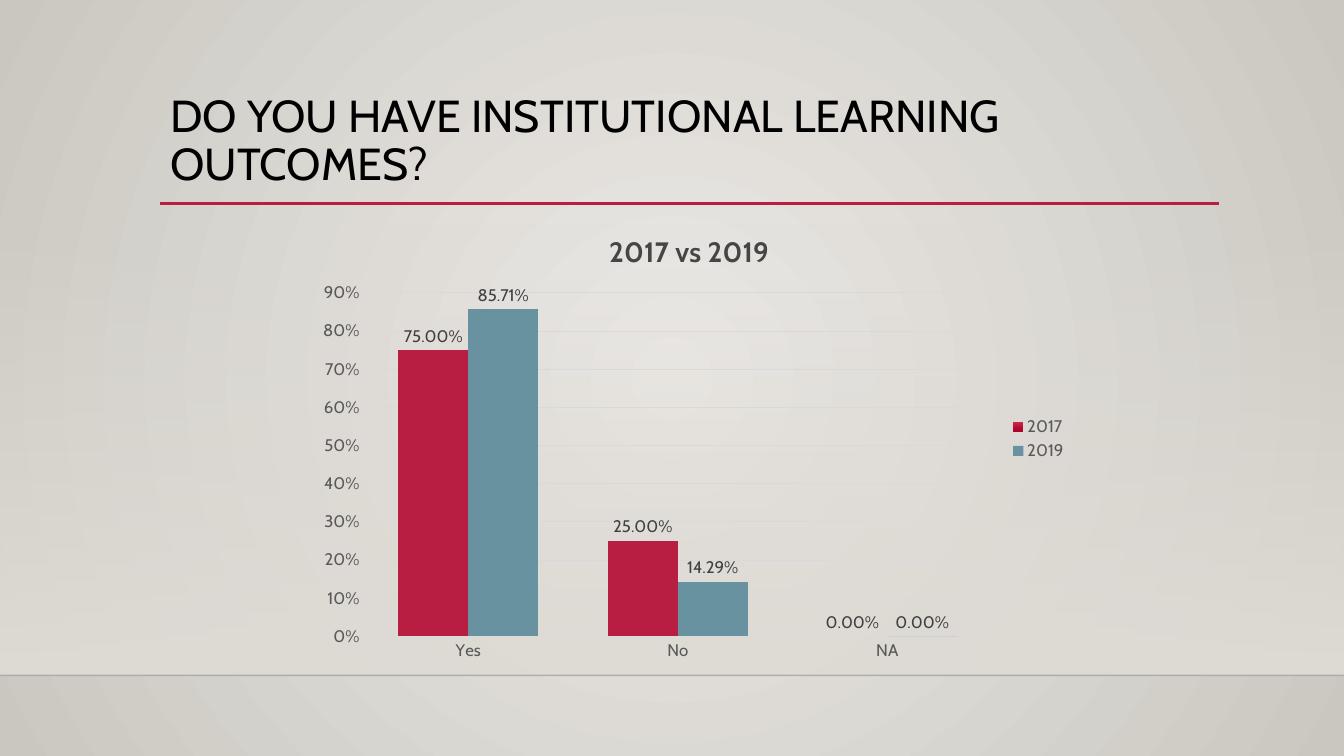
"""Build a slide that compares survey answers on learning outcomes in 2017 and 2019."""
from dataclasses import dataclass
from typing import Any, Optional

from lxml import etree
from pptx import Presentation
from pptx.chart.data import CategoryChartData
from pptx.dml.color import RGBColor
from pptx.enum.chart import XL_CHART_TYPE, XL_LABEL_POSITION, XL_LEGEND_POSITION, XL_TICK_MARK
from pptx.enum.shapes import MSO_CONNECTOR, MSO_SHAPE
from pptx.enum.text import MSO_ANCHOR, PP_ALIGN
from pptx.oxml.ns import qn
from pptx.util import Pt

COLUMN = XL_CHART_TYPE.COLUMN_CLUSTERED
OUTER = XL_LABEL_POSITION.OUTSIDE_END
RIGHT = XL_LEGEND_POSITION.RIGHT
NO_TICK = XL_TICK_MARK.NONE
STRAIGHT = MSO_CONNECTOR.STRAIGHT
RECT = MSO_SHAPE.RECTANGLE
TOP = MSO_ANCHOR.TOP
LEFT, CENTER = PP_ALIGN.LEFT, PP_ALIGN.CENTER

FONT = "Cabin"
WIDTH, HEIGHT = 960, 540
INK = {
    "black": "000000", "edge": "000001", "red": "B71E42", "blue": "6892A0",
    "title": "454545", "label": "404040", "axis": "595959", "grid": "D9D9D9",
    "wall": "DFDBD5", "light": "ECEAE7", "dark": "CAC7C1",
    "rose": "C7304C", "wine": "B3062F", "deep": "AA062C",
}


@dataclass
class Stop:
    place: int
    ink: str
    alpha: int = 100


@dataclass
class Rule:
    left: float
    right: float
    y: float
    ink: str
    width: float
    alpha: int = 100


@dataclass
class Survey:
    year: str
    shares: tuple[float, ...]
    ink: str
    stops: Optional[list[Stop]] = None


RULES = [
    Rule(0, WIDTH, 482.4, "edge", 1, 20),
    Rule(114.5, 871, 145.5, "red", 2.5),
]
ANSWERS = ["Yes", "No", "NA"]
SURVEYS = [
    Survey("2017", (0.75, 0.25, 0), "red",
           [Stop(0, "rose"), Stop(69, "wine"), Stop(100, "deep")]),
    Survey("2019", (0.8571, 0.1429, 0), "blue"),
]


def color(ink: str) -> RGBColor:
    return RGBColor.from_string(INK[ink])


def fade(node: Any, alpha: int) -> None:
    if alpha < 100:
        etree.SubElement(node, qn("a:alpha"), val=str(alpha * 1000))


def blend(owner: Any, fill: Any, stops: list[Stop], round_: bool = False) -> None:
    fill.gradient()
    grad = owner.find(".//" + qn("a:gradFill"))
    for child in list(grad):
        grad.remove(child)
    group = etree.SubElement(grad, qn("a:gsLst"))
    for stop in stops:
        mark = etree.SubElement(group, qn("a:gs"), pos=str(stop.place * 1000))
        fade(etree.SubElement(mark, qn("a:srgbClr"), val=INK[stop.ink]), stop.alpha)
    if round_:
        ring = etree.SubElement(grad, qn("a:path"), path="circle")
        etree.SubElement(ring, qn("a:fillToRect"), l="50000", t="50000", r="50000", b="50000")
    else:
        etree.SubElement(grad, qn("a:lin"), ang="5400000", scaled="0")


def style(font: Any, size: float, ink: str, bold: bool = False) -> None:
    font.name, font.size, font.bold = FONT, Pt(size), bold
    font.color.rgb = color(ink)


def write(frame: Any, text: str, *, size: float, ink: str, bold: bool = False,
          align: Any = LEFT, pitch: float = 1) -> None:
    para = frame.paragraphs[0]
    para.alignment, para.line_spacing = align, pitch
    run = para.add_run()
    run.text = text
    style(run.font, size, ink, bold)


def draw_rule(slide: Any, rule: Rule) -> None:
    line = slide.shapes.add_connector(STRAIGHT, Pt(rule.left), Pt(rule.y), Pt(rule.right), Pt(rule.y))
    line.line.width = Pt(rule.width)
    line.line.color.rgb = color(rule.ink)
    fade(line.element.find(".//" + qn("a:srgbClr")), rule.alpha)
    etree.SubElement(line.element.spPr, qn("a:effectLst"))


def place(node: Any, index: int, inner: bool = False, **spots: float) -> None:
    old = node.find(qn("c:layout"))
    if old is not None:
        node.remove(old)
    layout = etree.Element(qn("c:layout"))
    node.insert(index, layout)
    manual = etree.SubElement(layout, qn("c:manualLayout"))
    if inner:
        etree.SubElement(manual, qn("c:layoutTarget"), val="inner")
    for key in ("x", "y"):
        etree.SubElement(manual, qn(f"c:{key}Mode"), val="edge")
    for key, spot in spots.items():
        etree.SubElement(manual, qn(f"c:{key}"), val=str(spot))


def draw_chart(slide: Any) -> None:
    data = CategoryChartData(number_format="0.00%")
    data.categories = ANSWERS
    for survey in SURVEYS:
        data.add_series(survey.year, survey.shares)
    chart = slide.shapes.add_chart(COLUMN, Pt(215.3), Pt(145.4), Pt(554.4), Pt(336.2), data).chart
    style(chart.font, 10, "black")
    chart.has_title = True
    write(chart.chart_title.text_frame, "2017 vs 2019", size=20, ink="title", bold=True, align=CENTER)
    place(chart.element.find(".//" + qn("c:title")), 1, x=0.39, y=0.05)
    place(chart.element.find(".//" + qn("c:plotArea")), 0, inner=True, x=0.08, y=0.19, w=0.81, h=0.73)

    chart.has_legend = True
    chart.legend.position = RIGHT
    chart.legend.include_in_layout = False
    style(chart.legend.font, 12, "axis")

    for axis in (chart.category_axis, chart.value_axis):
        axis.major_tick_mark = axis.minor_tick_mark = NO_TICK
        style(axis.tick_labels.font, 12, "axis")
    edge = chart.category_axis.format.line
    edge.width, edge.color.rgb = Pt(1), color("grid")
    scale = chart.value_axis
    scale.minimum_scale, scale.maximum_scale, scale.major_unit = 0, 0.9, 0.1
    scale.tick_labels.number_format = "0%"
    scale.tick_labels.number_format_is_linked = False
    scale.format.line.fill.background()
    grid = scale.major_gridlines.format.line
    grid.width, grid.color.rgb = Pt(0.75), color("grid")

    plot = chart.plots[0]
    plot.gap_width, plot.overlap, plot.vary_by_categories = 100, 0, False
    for survey, bars in zip(SURVEYS, plot.series):
        fills = [bars.format.fill]
        if survey.stops:
            blend(chart.element, bars.format.fill, survey.stops)
            fills = [bars.points[i].format.fill for i, share in enumerate(survey.shares) if share]
        for fill in fills:
            fill.solid()
            fill.fore_color.rgb = color(survey.ink)
        labels = bars.data_labels
        labels.show_value, labels.position = True, OUTER
        labels.number_format, labels.number_format_is_linked = "0.00%", False
        style(labels.font, 12, "label")


def main() -> None:
    deck = Presentation()
    deck.slide_width, deck.slide_height = Pt(WIDTH), Pt(HEIGHT)
    slide = deck.slides.add_slide(deck.slide_layouts[6])
    blend(slide.element, slide.background.fill, [Stop(0, "light"), Stop(100, "dark")], round_=True)

    wall = slide.shapes.add_shape(RECT, Pt(0), Pt(159), Pt(WIDTH), Pt(323.4))
    wall.shadow.inherit = False
    wall.line.fill.background()
    blend(wall.element, wall.fill, [Stop(0, "wall", 0), Stop(100, "wall")])
    for rule in RULES:
        draw_rule(slide, rule)

    frame = slide.shapes.add_textbox(Pt(114.5), Pt(63.4), Pt(756), Pt(82.8)).text_frame
    frame.word_wrap, frame.vertical_anchor = True, TOP
    write(frame, "DO YOU HAVE INSTITUTIONAL LEARNING OUTCOMES?", size=32, ink="black", pitch=0.9)
    draw_chart(slide)
    deck.save("out.pptx")


if __name__ == "__main__":
    main()
